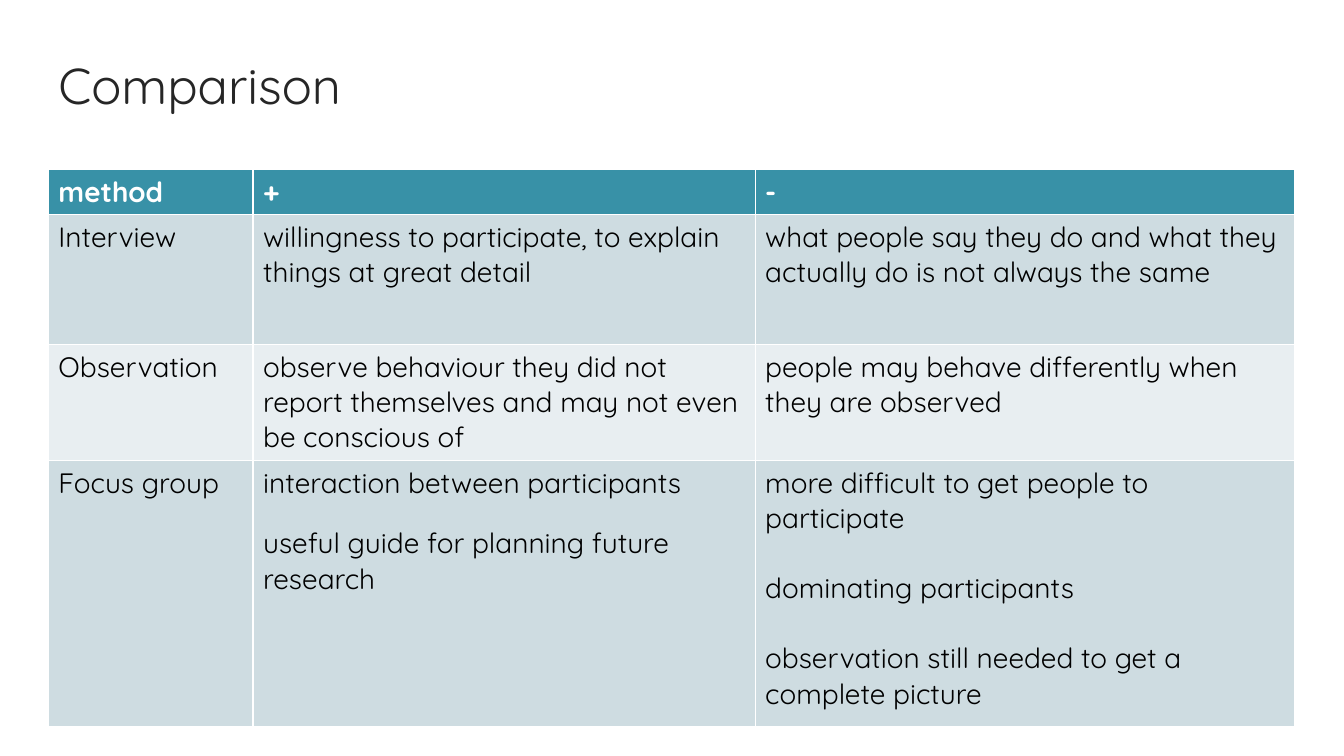
"""Build a slide comparing three research methods in a table."""
from dataclasses import dataclass

from pptx import Presentation
from pptx.dml.color import RGBColor as Color
from pptx.enum.text import MSO_ANCHOR as Anchor, PP_ALIGN as Align
from pptx.util import Inches, Pt

TITLE = "Comparison"
HEADER = ["method", "+", "-"]
METHODS = [
    ("Interview",
     ["willingness to participate, to explain things at great detail"],
     ["what people say they do and what they actually do is not always the same"]),
    ("Observation",
     ["observe behaviour they did not report themselves and may not even be conscious of"],
     ["people may behave differently when they are observed"]),
    ("Focus group",
     ["interaction between participants", "useful guide for planning future research"],
     ["more difficult to get people to participate", "dominating participants",
      "observation still needed to get a complete picture"]),
]
SLIDE = (13.33, 7.5)
LEFT = 0.48
TITLE_BOX = (LEFT, 0.49, 9.75, 1.4)
TABLE_TOP = 1.68
COLUMNS = [2.03, 4.98, 5.35]
ROWS = [0.43, 1.29, 1.15, 2.64]
POINT_GAPS = [0, 18, 25]


@dataclass(frozen=True)
class Theme:
    font: str = "Quicksand"
    title_size: int = 36
    body_size: int = 20
    title: str = "262626"
    header: str = "3891A7"
    header_text: str = "FFFFFF"
    text: str = "000000"
    bands: tuple = ("CEDCE1", "E8EEF1")


THEME = Theme()


def write(frame, lines, size, color, bold=False, gap=0):
    """Fill a text frame with one paragraph per line."""
    for index, line in enumerate(lines):
        para = frame.paragraphs[0] if index == 0 else frame.add_paragraph()
        para.alignment = Align.LEFT
        para.space_before = Pt(gap if index else 0)
        span = para.add_run()
        span.text = line
        for name, value in {"name": THEME.font, "size": Pt(size), "bold": bold}.items():
            setattr(span.font, name, value)
        span.font.color.rgb = Color.from_string(color)


def add_title(page):
    """Place and format the title."""
    title = page.shapes.title
    for name, value in zip(("left", "top", "width", "height"), TITLE_BOX):
        setattr(title, name, Inches(value))
    title.text_frame.vertical_anchor = Anchor.TOP
    write(title.text_frame, [TITLE], THEME.title_size, THEME.title)


def add_comparison(page):
    """Add the table of methods with banded rows."""
    box = [Inches(v) for v in (LEFT, TABLE_TOP, sum(COLUMNS), sum(ROWS))]
    table = page.shapes.add_table(len(ROWS), len(COLUMNS), *box).table
    for column, width in zip(table.columns, COLUMNS):
        column.width = Inches(width)
    for row, height in zip(table.rows, ROWS):
        row.height = Inches(height)
    content = [[[label] for label in HEADER]]
    content += [[[method], pros, cons] for method, pros, cons in METHODS]
    for r, cells in enumerate(content):
        is_header = r == 0
        fill = THEME.header if is_header else THEME.bands[(r - 1) % 2]
        color = THEME.header_text if is_header else THEME.text
        for c, lines in enumerate(cells):
            cell = table.cell(r, c)
            cell.fill.solid()
            cell.fill.fore_color.rgb = Color.from_string(fill)
            write(cell.text_frame, lines, THEME.body_size, color, is_header, POINT_GAPS[c])


def main():
    """Create the deck and save it."""
    deck = Presentation()
    deck.slide_width, deck.slide_height = map(Inches, SLIDE)
    page = deck.slides.add_slide(deck.slide_layouts.get_by_name("Title Only"))
    add_title(page)
    add_comparison(page)
    deck.save("out.pptx")


if __name__ == "__main__":
    main()
